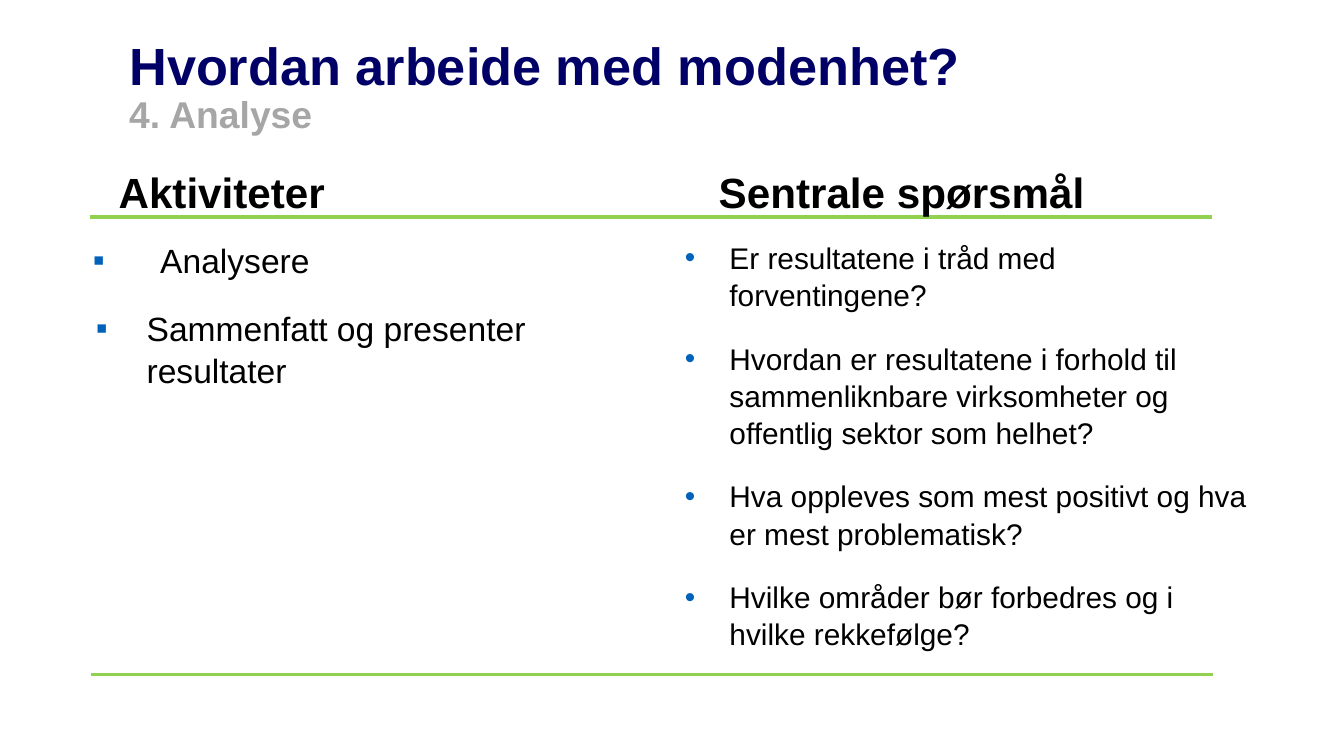
from lxml import etree
from pptx import Presentation
from pptx import util as u
from pptx.dml.color import RGBColor
from pptx.enum import shapes, text
from pptx.oxml import ns


def color(value):
    return RGBColor.from_string(value)


class SlideBuilder:
    font = "Arial"
    black = "000000"
    navy = "000066"
    gray = "A6A6A6"
    green = "92D050"
    blue = "0062BA"

    def __init__(self, slide):
        self.slide = slide

    def style(self, paragraph, size, bold=False):
        paragraph.font.name = self.font
        paragraph.font.size = u.Pt(size)
        paragraph.font.bold = bold
        paragraph.font.color.rgb = color(self.black)

    def place(self, shape, left, top, width, height):
        shape.left, shape.top = u.Inches(left), u.Inches(top)
        shape.width, shape.height = u.Inches(width), u.Inches(height)

    def clear_margins(self, frame):
        frame.margin_left = frame.margin_right = 0
        frame.margin_top = frame.margin_bottom = 0

    def title(self, heading, subheading):
        title = self.slide.shapes.title
        self.place(title, 1.71, 0.52, 15, 1.29)
        frame = title.text_frame
        self.clear_margins(frame)
        frame.word_wrap = True
        frame.auto_size = text.MSO_AUTO_SIZE.NONE
        frame.vertical_anchor = text.MSO_ANCHOR.BOTTOM
        paragraph = frame.paragraphs[0]
        paragraph.alignment = text.PP_ALIGN.LEFT
        paragraph.line_spacing = 0.9
        paragraph.font.name = self.font
        paragraph.font.bold = True
        self.title_run(paragraph, heading, 49.8, self.navy)
        paragraph.add_line_break()
        self.title_run(paragraph, subheading, 35.5, self.gray)

    def title_run(self, paragraph, words, size, shade):
        run = paragraph.add_run()
        run.text = words
        run.font.size = u.Pt(size)
        run.font.color.rgb = color(shade)

    def column_heading(self, words, left, width):
        box = self.slide.shapes.add_textbox(
            u.Inches(left), u.Inches(2.15), u.Inches(width), u.Inches(0.78))
        frame = box.text_frame
        frame.word_wrap = False
        frame.auto_size = text.MSO_AUTO_SIZE.SHAPE_TO_FIT_TEXT
        frame.text = words
        self.style(frame.paragraphs[0], 40.2, bold=True)

    def bullet_list(self, left, size, symbol, items):
        box = self.slide.shapes.add_textbox(
            u.Inches(left), u.Inches(3.15), u.Inches(7.53), u.Inches(5.42))
        frame = box.text_frame
        self.clear_margins(frame)
        frame.word_wrap = True
        for index, (words, margin, hanging) in enumerate(items):
            paragraph = frame.add_paragraph() if index else frame.paragraphs[0]
            paragraph.text = words
            paragraph.line_spacing = 1.04
            paragraph.space_before = u.Pt(25 if index else 0)
            self.bullet(paragraph, symbol, margin, hanging)
            self.style(paragraph, size)

    def bullet(self, paragraph, symbol, margin, hanging):
        properties = paragraph._p.get_or_add_pPr()
        properties.set("marL", str(u.Inches(margin)))
        properties.set("indent", str(-u.Inches(hanging)))
        shade = etree.SubElement(properties, ns.qn("a:buClr"))
        etree.SubElement(shade, ns.qn("a:srgbClr"), val=self.blue)
        etree.SubElement(properties, ns.qn("a:buFont"), typeface=self.font)
        etree.SubElement(properties, ns.qn("a:buChar"), char=symbol)

    def rule(self, left, top, length):
        line = self.slide.shapes.add_connector(
            shapes.MSO_CONNECTOR.STRAIGHT, u.Inches(left), u.Inches(top),
            u.Inches(left + length), u.Inches(top))
        line.line.color.rgb = color(self.green)
        line.line.width = u.Pt(3)
        etree.SubElement(line._element.spPr, ns.qn("a:effectLst"))


def main():
    presentation = Presentation()
    presentation.slide_width = u.Inches(17.78)
    presentation.slide_height = u.Inches(10)
    builder = SlideBuilder(
        presentation.slides.add_slide(presentation.slide_layouts[5]))

    activities = [
        ("Analysere", 0.93, 0.89),
        ("Sammenfatt og presenter resultater", 0.75, 0.67),
    ]
    questions = [
        "Er resultatene i tråd med forventingene?",
        "Hvordan er resultatene i forhold til sammenliknbare virksomheter "
        "og offentlig sektor som helhet?",
        "Hva oppleves som mest positivt og hva er mest problematisk?",
        "Hvilke områder bør forbedres og i hvilke rekkefølge?",
    ]

    builder.bullet_list(1.19, 32, "▪", activities)
    builder.bullet_list(
        9.06, 28.4, "•", [(question, 0.59, 0.59) for question in questions])
    builder.title("Hvordan arbeide med modenhet?", "4. Analyse")
    builder.rule(1.19, 2.87, 14.84)
    builder.rule(1.21, 8.92, 14.84)
    builder.column_heading("Sentrale spørsmål", 9.41, 5.09)
    builder.column_heading("Aktiviteter", 1.47, 2.96)
    presentation.save("out.pptx")


if __name__ == "__main__":
    main()
